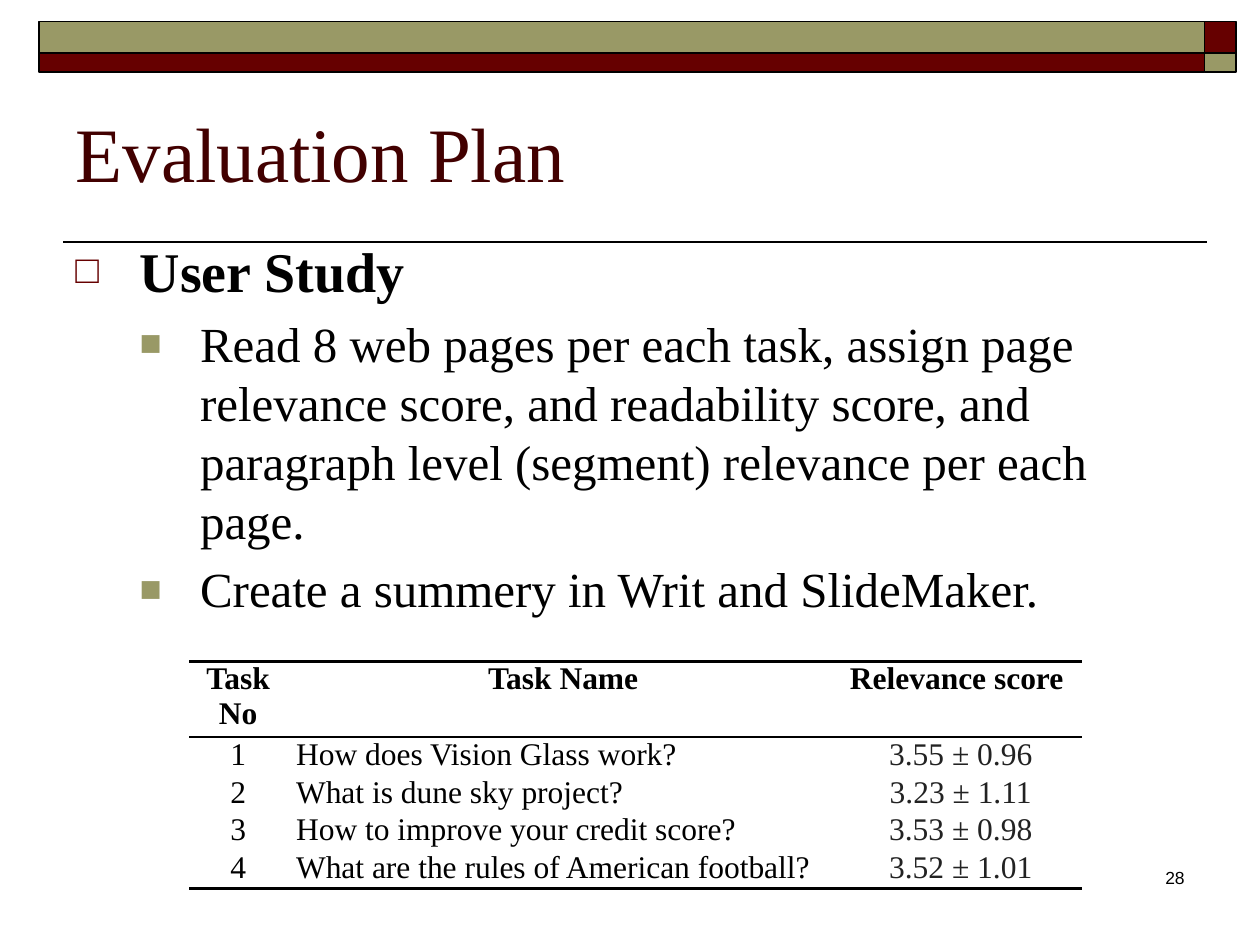
from dataclasses import dataclass

from lxml.etree import SubElement
from pptx import Presentation
from pptx.dml.color import RGBColor
from pptx.enum.shapes import MSO_CONNECTOR, MSO_SHAPE
from pptx.enum.text import MSO_ANCHOR, PP_ALIGN
from pptx.oxml.ns import qn
from pptx.util import Inches, Pt


@dataclass(frozen=True)
class Theme:
    maroon: str = "660000"
    olive: str = "999966"
    title: str = "420000"
    black: str = "000000"
    score: str = "222222"
    serif: str = "Times New Roman"
    sans: str = "Arial"
    title_size: int = 44
    heading_size: int = 32
    body_size: int = 28
    table_size: int = 18
    number_size: int = 10


THEME = Theme()
NO_STYLE_TABLE = "{2D5ABB26-0587-4C30-8999-92F81FD0307C}"

# Text, indent level, bold
BODY = [
    ("User Study", 0, True),
    ("Read 8 web pages per each task, assign page relevance score, and readability "
     "score, and paragraph level (segment) relevance per each page.", 1, False),
    ("Create a summery in Writ and SlideMaker.", 1, False),
]
# For each level: text indent, hanging indent, bullet, colour, bullet percent, text size
LEVELS = [
    (0.51, 0.51, "□", THEME.maroon, 70, THEME.heading_size),
    (0.99, 0.48, "■", THEME.olive, 75, THEME.body_size),
]
TASKS = [
    ("Task No", "Task Name", "Relevance score "),
    ("1", "How does Vision Glass work?", "3.55 ± 0.96"),
    ("2", "What is dune sky project?", "3.23 ± 1.11"),
    ("3", "How to improve your credit score?", "3.53 ± 0.98"),
    ("4", "What are the rules of American football?", "3.52 ± 1.01"),
]


def format_runs(paragraph, size, color=THEME.black, font=THEME.serif, bold=False):
    for run in paragraph.runs:
        run.font.name = font
        run.font.size = Pt(size)
        run.font.bold = bold
        run.font.color.rgb = RGBColor.from_string(color)


def add_text_box(slide, left, top, width, height):
    shape = slide.shapes.add_textbox(
        Inches(left), Inches(top), Inches(width), Inches(height))
    shape.text_frame.word_wrap = True
    return shape.text_frame


def add_band(slide):
    """Two rows of a long bar and a short end, with alternating colours."""
    colors = (THEME.olive, THEME.maroon)
    for row, (top, height) in enumerate([(0.17, 0.25), (0.42, 0.15)]):
        for column, (left, width) in enumerate([(0.31, 9.25), (9.56, 0.25)]):
            shape = slide.shapes.add_shape(
                MSO_SHAPE.RECTANGLE,
                Inches(left), Inches(top), Inches(width), Inches(height))
            shape.shadow.inherit = False
            shape.fill.solid()
            shape.fill.fore_color.rgb = RGBColor.from_string(colors[(row + column) % 2])
            shape.line.color.rgb = RGBColor.from_string(THEME.black)
            shape.line.width = Pt(1)


def add_rule(slide):
    rule = slide.shapes.add_connector(
        MSO_CONNECTOR.STRAIGHT, Inches(0.5), Inches(1.92), Inches(9.58), Inches(1.92))
    rule.line.color.rgb = RGBColor.from_string(THEME.black)
    rule.line.width = Pt(1)
    SubElement(rule.element.spPr, qn("a:effectLst"))


def set_title(slide, text):
    title = slide.shapes.title
    title.left, title.top = Inches(0.5), Inches(0.58)
    title.width, title.height = Inches(9), Inches(1.25)
    title.text_frame.text = text
    title.text_frame.vertical_anchor = MSO_ANCHOR.MIDDLE
    paragraph = title.text_frame.paragraphs[0]
    paragraph.alignment = PP_ALIGN.LEFT
    format_runs(paragraph, THEME.title_size, THEME.title)


def set_bullet(paragraph, indent, hanging, character, color, percent):
    properties = paragraph._p.get_or_add_pPr()
    properties.set("marL", str(Inches(indent)))
    properties.set("indent", str(-Inches(hanging)))
    bullet_color = SubElement(properties, qn("a:buClr"))
    SubElement(bullet_color, qn("a:srgbClr"), val=color)
    SubElement(properties, qn("a:buSzPct"), val=str(percent * 1000))
    SubElement(properties, qn("a:buFont"), typeface=THEME.sans)
    SubElement(properties, qn("a:buChar"), char=character)


def add_body(slide):
    text_frame = add_text_box(slide, 0.5, 1.83, 9, 3.25)
    for index, (text, level, bold) in enumerate(BODY):
        paragraph = text_frame.add_paragraph() if index else text_frame.paragraphs[0]
        *bullet, size = LEVELS[level]
        paragraph.text = text
        paragraph.level = level
        paragraph.space_before = Pt(size * 0.2)
        set_bullet(paragraph, *bullet)
        format_runs(paragraph, size, bold=bold)


def set_border(cell, side, width):
    line = SubElement(cell._tc.get_or_add_tcPr(), qn(f"a:{side}"), w=str(Pt(width)))
    fill = SubElement(line, qn("a:solidFill"))
    SubElement(fill, qn("a:srgbClr"), val=THEME.black)


def add_task_table(slide):
    widths = (0.78, 4.38, 1.93)
    # Rows start low and grow to fit their text
    row_height = 0.1
    table = slide.shapes.add_table(
        len(TASKS), len(widths), Inches(1.5), Inches(5.25),
        Inches(sum(widths)), Inches(row_height * len(TASKS))).table
    table._tbl.tblPr.find(qn("a:tableStyleId")).text = NO_STYLE_TABLE
    for column, width in zip(table.columns, widths):
        column.width = Inches(width)
    # Rules above and below the header and under the last row
    borders = {
        0: [("lnT", 1.5), ("lnB", 1)],
        len(TASKS) - 1: [("lnB", 1.5)],
    }
    for row, values in enumerate(TASKS):
        for column, value in enumerate(values):
            cell = table.cell(row, column)
            cell.margin_left = cell.margin_right = Inches(0.07)
            cell.margin_top = cell.margin_bottom = 0
            for side, width in borders.get(row, []):
                set_border(cell, side, width)
            cell.fill.background()
            cell.text_frame.text = value
            paragraph = cell.text_frame.paragraphs[0]
            is_name = row > 0 and column == 1
            is_score = row > 0 and column == 2
            paragraph.alignment = PP_ALIGN.LEFT if is_name else PP_ALIGN.CENTER
            format_runs(paragraph, THEME.table_size,
                        THEME.score if is_score else THEME.black, bold=row == 0)


def add_page_number(slide, number):
    text_frame = add_text_box(slide, 7.42, 6.83, 2.08, 0.5)
    text_frame.text = number
    paragraph = text_frame.paragraphs[0]
    paragraph.alignment = PP_ALIGN.RIGHT
    format_runs(paragraph, THEME.number_size, font=THEME.sans)


def main():
    presentation = Presentation()
    presentation.slide_width, presentation.slide_height = Inches(10), Inches(7.5)
    slide = presentation.slides.add_slide(presentation.slide_layouts[5])
    add_rule(slide)
    add_band(slide)
    add_page_number(slide, "28")
    set_title(slide, "Evaluation Plan")
    add_body(slide)
    add_task_table(slide)
    presentation.save("out.pptx")


if __name__ == "__main__":
    main()
